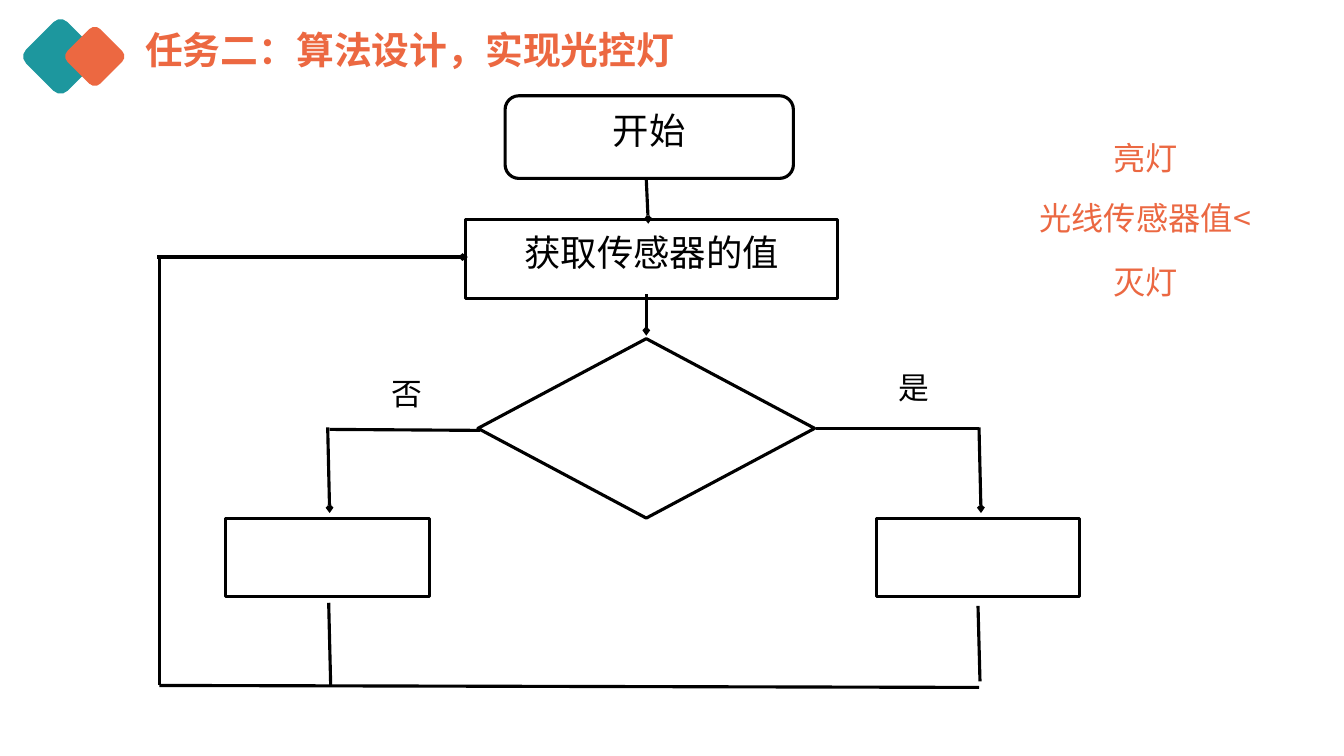
from lxml import etree
from pptx import Presentation
from pptx.dml.color import RGBColor
from pptx.enum.shapes import MSO_CONNECTOR, MSO_SHAPE
from pptx.enum.text import MSO_ANCHOR, PP_ALIGN
from pptx.oxml.ns import qn
from pptx.util import Inches, Pt

BLACK = RGBColor(0x00, 0x00, 0x00)
TEAL = RGBColor(0x1D, 0x97, 0x9E)
ORANGE = RGBColor(0xEC, 0x68, 0x41)
HINT_ORANGE = RGBColor(0xEB, 0x68, 0x42)

RECT = MSO_SHAPE.RECTANGLE
ROUNDED = MSO_SHAPE.ROUNDED_RECTANGLE
DIAMOND = MSO_SHAPE.DIAMOND
STRAIGHT = MSO_CONNECTOR.STRAIGHT
LEFT, CENTER = PP_ALIGN.LEFT, PP_ALIGN.CENTER
TOP = MSO_ANCHOR.TOP


def write_text(frame, text, *, size, color=BLACK, bold=False, align=CENTER,
               font="Noto Sans CJK SC"):
    frame.word_wrap = True
    frame.vertical_anchor = TOP
    paragraph = frame.paragraphs[0]
    paragraph.alignment = align
    run = paragraph.add_run()
    run.text = text
    run.font.name = font
    run.font.size = Pt(size)
    run.font.bold = bold
    run.font.color.rgb = color
    # Chinese characters take the East Asian typeface
    etree.SubElement(run._r.get_or_add_rPr(), qn("a:ea")).set("typeface", font)


class FlowchartSlide:
    line_color = BLACK
    line_width = Pt(2.25)

    def __init__(self, slide):
        self.shapes = slide.shapes

    def add_node(self, kind, left, top, width, height):
        node = self.shapes.add_shape(kind, *map(Inches, (left, top, width, height)))
        node.shadow.inherit = False
        node.fill.background()
        node.line.color.rgb = self.line_color
        node.line.width = self.line_width

    def add_tile(self, left, top, side, color):
        tile = self.shapes.add_shape(ROUNDED, *map(Inches, (left, top, side, side)))
        tile.shadow.inherit = False
        tile.rotation = 45
        tile.fill.solid()
        tile.fill.fore_color.rgb = color
        tile.line.fill.background()

    def add_label(self, text, left, top, width, height, **text_format):
        label = self.shapes.add_textbox(*map(Inches, (left, top, width, height)))
        write_text(label.text_frame, text, **text_format)

    def add_flow(self, start, end, arrow=False):
        flow = self.shapes.add_connector(STRAIGHT, *map(Inches, (*start, *end)))
        flow.line.color.rgb = self.line_color
        flow.line.width = self.line_width
        if arrow:
            head = etree.SubElement(flow.line._get_or_add_ln(), qn("a:tailEnd"))
            for key, value in (("type", "arrow"), ("w", "sm"), ("len", "sm")):
                head.set(key, value)
        etree.SubElement(flow._element.spPr, qn("a:effectLst"))


def main():
    deck = Presentation()
    deck.slide_width, deck.slide_height = Inches(13.33), Inches(7.5)
    chart = FlowchartSlide(deck.slides.add_slide(deck.slide_layouts[6]))

    # Answer hints
    for hint, left, top, width in (
        ("亮灯", 9.83, 1.32, 3.06),
        ("灭灯", 9.83, 2.55, 3.06),
        ("光线传感器值<", 9.33, 1.92, 4.06),
    ):
        chart.add_label(hint, left, top, width, 0.78, size=23, color=HINT_ORANGE)

    # Start and sensor steps
    chart.add_node(ROUNDED, 5.01, 0.95, 2.86, 0.82)
    chart.add_label("开始", 5.25, 1.02, 2.38, 0.68, size=26)
    chart.add_node(RECT, 4.62, 2.18, 3.69, 0.78)
    chart.add_label("获取传感器的值", 5.08, 2.23, 2.77, 0.68, size=26)

    # Decision and its two outcomes
    chart.add_node(DIAMOND, 4.74, 3.36, 3.34, 1.78)
    for outcome_left in (8.69, 2.24):
        chart.add_node(RECT, outcome_left, 5.14, 2.02, 0.78)
    chart.add_label("是", 8.81, 3.61, 0.51, 0.61, size=22)
    chart.add_label("否", 3.78, 3.67, 0.51, 0.61, size=22)

    # Arrows into each step
    for start, end in (
        ((6.41, 1.78), (6.43, 2.22)),
        ((6.41, 2.92), (6.41, 3.33)),
        ((9.71, 4.24), (9.73, 5.09)),
        ((3.25, 4.24), (3.27, 5.09)),
        ((1.56, 2.55), (4.64, 2.55)),
    ):
        chart.add_flow(start, end, arrow=True)

    # Plain lines: branches, then the loop back to the sensor
    for start, end in (
        ((8.09, 4.25), (9.71, 4.25)),
        ((3.27, 4.26), (4.76, 4.27)),
        ((9.7, 6.01), (9.72, 6.76)),
        ((3.26, 5.98), (3.28, 6.81)),
        ((1.58, 6.8), (9.71, 6.82)),
        ((1.58, 2.55), (1.58, 6.8)),
    ):
        chart.add_flow(start, end)

    # Heading
    chart.add_tile(0.31, 0.27, 0.58, TEAL)
    chart.add_tile(0.71, 0.33, 0.46, ORANGE)
    chart.add_label("任务二：算法设计，实现光控灯", 1.34, 0.22, 7.81, 0.64,
                    size=27, color=ORANGE, bold=True, align=LEFT)

    deck.save("out.pptx")


if __name__ == "__main__":
    main()
